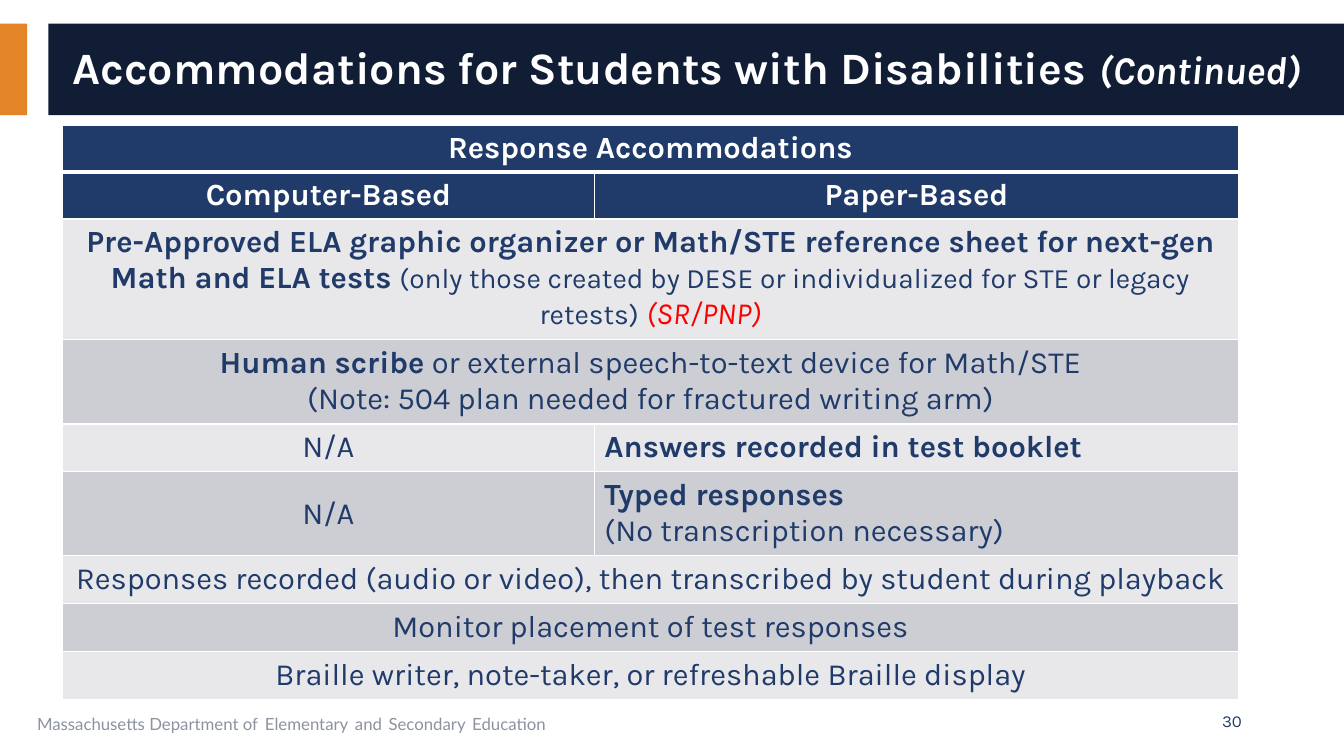
import pptx
import pptx.util
import pptx.dml.color
import pptx.enum.shapes
import pptx.enum.text
import pptx.oxml
import pptx.oxml.ns

Pt = pptx.util.Pt
ALIGN = pptx.enum.text.PP_ALIGN
ANCHOR = pptx.enum.text.MSO_ANCHOR

COLORS = {
    "orange": "E38526",
    "night": "101D35",
    "navy": "203B6A",
    "light": "E8E8EB",
    "dark": "CDCED4",
    "gray": "8D92A1",
    "red": "FF0000",
    "white": "FFFFFF",
}

COLUMN_WIDTHS = [380, 460]

TABLE_ROWS = [
    (33, "navy", [[[("Response Accommodations", {"bold": True})]]]),
    (33.5, "navy", [[[("Computer-Based", {"bold": True})]], [[("Paper-Based", {"bold": True})]]]),
    (84.25, "light", [[[
        ("Pre-Approved ELA graphic organizer or Math/STE reference sheet for next-gen "
         "Math and ELA tests ", {"bold": True}),
        ("(only those created by DESE or individualized for STE or legacy retests)", {"size": 20}),
        (" ", {}),
        ("(SR/PNP)", {"color": "red", "italic": True}),
    ]]]),
    (58.5, "dark", [[
        [("Human scribe", {"bold": True}),
         (" or external speech-to-text device for Math/STE", {})],
        [("(Note: 504 plan needed for fractured writing arm)", {})],
    ]]),
    (34.25, "light", [[[("N/A", {})]], [[("Answers recorded in test booklet", {"bold": True})]]]),
    (58.5, "dark", [[[("N/A", {})]], [
        [("Typed responses", {"bold": True})],
        [("(No transcription necessary)", {})],
    ]]),
    (34.25, "light", [[[
        ("Responses recorded (audio or video), then transcribed by student during playback", {})]]]),
    (34.25, "dark", [[[("Monitor placement of test responses", {})]]]),
    (34.25, "light", [[[("Braille writer, note-taker, or refreshable Braille display", {})]]]),
]


def rgb(name):
    return pptx.dml.color.RGBColor.from_string(COLORS[name])


def add_span(para, text, font="Karla", size=22, color="navy", bold=False, italic=False):
    span = para.add_run()
    span.text = text
    span.font.name = font
    span.font.size = Pt(size)
    span.font.bold = bold
    span.font.italic = italic
    span.font.color.rgb = rgb(color)


def add_bar(page, left, width, color):
    bar = page.shapes.add_shape(
        pptx.enum.shapes.MSO_SHAPE.RECTANGLE, Pt(left), Pt(16.8), Pt(width), Pt(65.4))
    bar.shadow.inherit = False
    bar.fill.solid()
    bar.fill.fore_color.rgb = rgb(color)
    bar.line.fill.background()


def format_title(page):
    title = page.shapes.title
    title.left, title.top, title.width, title.height = Pt(44.6), Pt(23), Pt(895.7), Pt(53.3)
    frame = title.text_frame
    frame.word_wrap = True
    frame.auto_size = pptx.enum.text.MSO_AUTO_SIZE.NONE
    frame.vertical_anchor = ANCHOR.MIDDLE
    para = frame.paragraphs[0]
    para.alignment = ALIGN.LEFT
    para.line_spacing = 0.9
    add_span(para, "Accommodations for Students with Disabilities ", size=32, color="white", bold=True)
    add_span(para, "(Continued)", size=28, color="white", bold=True, italic=True)
    page.shapes._spTree.append(title._element)


def add_text(page, left, width, align, anchor):
    box = page.shapes.add_textbox(Pt(left), Pt(500.4), Pt(width), Pt(28.8))
    box.text_frame.word_wrap = True
    box.text_frame.vertical_anchor = anchor
    para = box.text_frame.paragraphs[0]
    para.alignment = align
    return para


def add_footer(page):
    para = add_text(page, 19.4, 607.7, ALIGN.LEFT, ANCHOR.TOP)
    words = ["Massachusetts Department of", "Elementary", "and", "Secondary", "Education"]
    for index, word in enumerate(words):
        if index:
            add_span(para, " ", font="Lato", size=18)
        add_span(para, word, font="Lato", size=12, color="gray")
    number = add_text(page, 678.2, 216, ALIGN.RIGHT, ANCHOR.MIDDLE)
    add_span(number, "30", size=12)


def set_borders(cell, top, bottom):
    properties = cell._tc.get_or_add_tcPr()
    edges = [("lnL", 1), ("lnR", 1), ("lnT", top), ("lnB", bottom)]
    for position, (edge, weight) in enumerate(edges):
        properties.insert(position, pptx.oxml.parse_xml(
            f'<a:{edge} {pptx.oxml.ns.nsdecls("a")} w="{Pt(weight)}"><a:solidFill>'
            f'<a:srgbClr val="{COLORS["white"]}"/></a:solidFill></a:{edge}>'))


def fill_cell(cell, paragraphs, color, align):
    cell.fill.solid()
    cell.fill.fore_color.rgb = rgb(color)
    frame = cell.text_frame
    for index, spans in enumerate(paragraphs):
        para = frame.add_paragraph() if index else frame.paragraphs[0]
        para.alignment = align
        for text, style in spans:
            ink = "white" if color == "navy" else "navy"
            add_span(para, text, **{"color": ink, **style})


def add_accommodations(page):
    heights = [height for height, _, _ in TABLE_ROWS]
    table = page.shapes.add_table(
        len(TABLE_ROWS), len(COLUMN_WIDTHS), Pt(44.6), Pt(89.3),
        Pt(sum(COLUMN_WIDTHS)), Pt(sum(heights))).table
    table.horz_banding = False
    for column, width in zip(table.columns, COLUMN_WIDTHS):
        column.width = Pt(width)
    for row_index, (height, color, contents) in enumerate(TABLE_ROWS):
        table.rows[row_index].height = Pt(height)
        cells = [table.cell(row_index, column) for column in range(len(COLUMN_WIDTHS))]
        if len(contents) == 1:
            cells[0].merge(cells[-1])
        for cell in cells:
            set_borders(cell, 3 if row_index == 1 else 1, 3 if row_index == 0 else 1)
        for column, paragraphs in enumerate(contents):
            left_aligned = column == 1 and color != "navy"
            fill_cell(cells[column], paragraphs, color, ALIGN.LEFT if left_aligned else ALIGN.CENTER)
            if row_index == 1:
                cells[column].margin_top = cells[column].margin_bottom = 0
            if row_index == 1 or (column == 0 and len(contents[-1]) > 1 and len(contents) > 1):
                cells[column].vertical_anchor = ANCHOR.MIDDLE


def main():
    deck = pptx.Presentation()
    deck.slide_width, deck.slide_height = Pt(960), Pt(540)
    page = deck.slides.add_slide(deck.slide_layouts[5])
    add_bar(page, 0, 19.5, "orange")
    add_bar(page, 34.5, 925.5, "night")
    format_title(page)
    add_footer(page)
    add_accommodations(page)
    deck.save("out.pptx")


if __name__ == "__main__":
    main()
